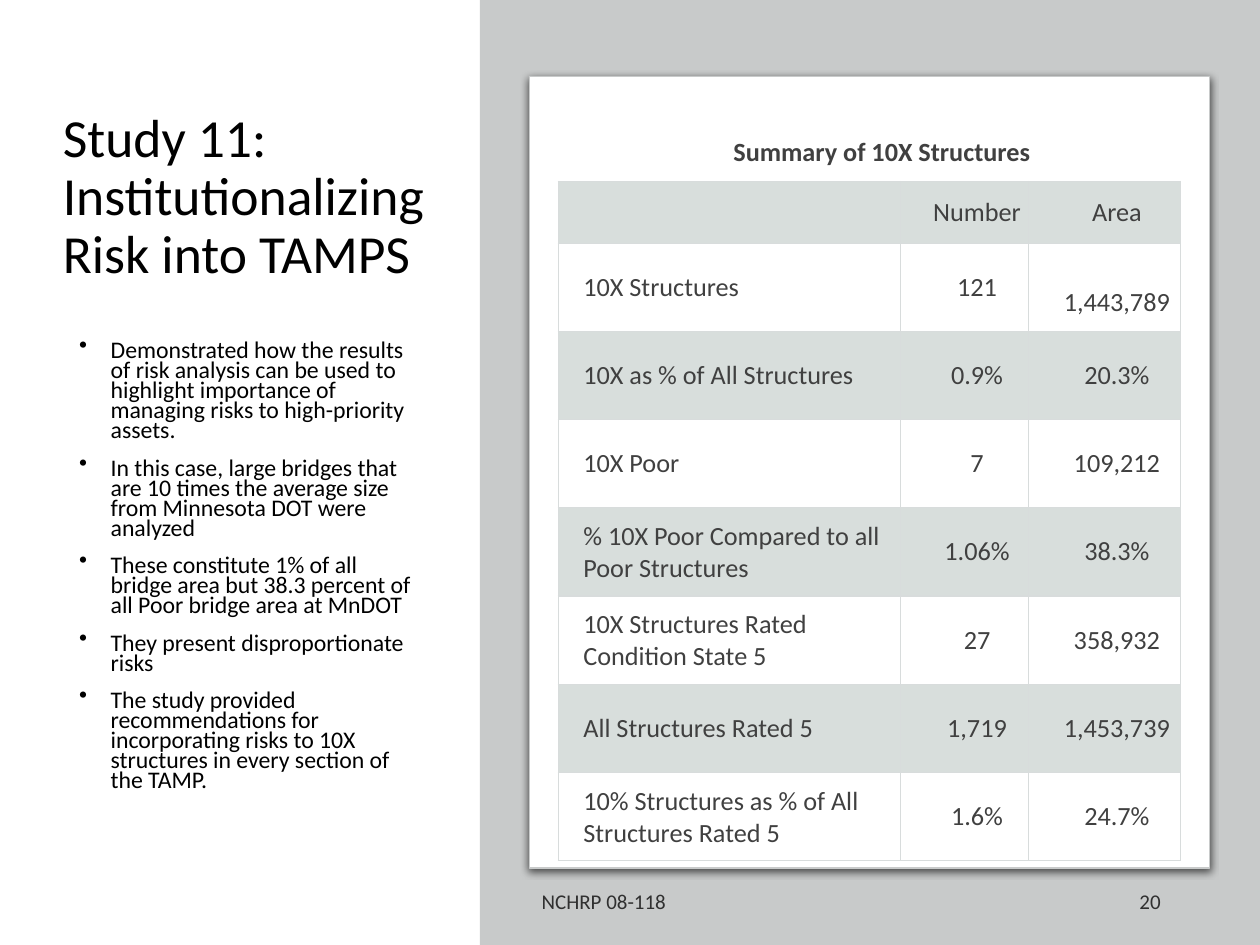
"""Build the slide on institutionalizing risk, with a summary table of 10X structures."""
from lxml import etree
from pptx import Presentation
from pptx import util as u
from pptx.dml.color import RGBColor
from pptx.enum import shapes, text
from pptx.oxml import ns, parse_xml

FONT = "Calibri"
GRAY, RULE, BAND = "C8CACA", "D8DCDC", "D8DEDC"
INK, FOOTER_INK, TABLE_INK = "000000", "303030", "404040"
LEFT, CENTER, RIGHT = text.PP_ALIGN.LEFT, text.PP_ALIGN.CENTER, text.PP_ALIGN.RIGHT
MIDDLE, BOTTOM = text.MSO_ANCHOR.MIDDLE, text.MSO_ANCHOR.BOTTOM

TITLE = "Study 11: Institutionalizing Risk into TAMPS"
BULLETS = [
    "Demonstrated how the results of risk analysis can be used to highlight "
    "importance of managing risks to high-priority assets.",
    "In this case, large bridges that are 10 times the average size from "
    "Minnesota DOT were analyzed",
    "These constitute 1% of all bridge area but 38.3 percent of all Poor "
    "bridge area at MnDOT",
    "They present disproportionate risks",
    "The study provided recommendations for incorporating risks to 10X "
    "structures in every section of the TAMP.",
]
FOOTERS = [
    ("NCHRP 08-118", (4.2, 6.95, 3.38, 0.4), LEFT),
    ("20", (7.06, 6.95, 2.25, 0.4), RIGHT),
]
ROWS = [
    ("Summary of 10X Structures", "", ""),
    ("", "Number", "Area"),
    ("10X Structures", "121", "1,443,789"),
    ("10X as % of All Structures", "0.9%", "20.3%"),
    ("10X Poor", "7", "109,212"),
    ("% 10X Poor Compared to all Poor Structures", "1.06%", "38.3%"),
    ("10X Structures Rated Condition State 5", "27", "358,932"),
    ("All Structures Rated 5", "1,719", "1,453,739"),
    ("10% Structures as % of All Structures Rated 5", "1.6%", "24.7%"),
]
COLUMN_WIDTHS = [2.72, 1.01, 1.21]
ROW_HEIGHTS = [0.49] * 2 + [0.7] * 7
LOWERED_CELL = (2, 2)


def color(code):
    return RGBColor.from_string(code)


def inches(place):
    return [u.Inches(value) for value in place]


def style(para, size, ink, align=LEFT, bold=False):
    para.alignment = align
    para.font.name = FONT
    para.font.size = u.Pt(size)
    para.font.bold = bold
    para.font.color.rgb = color(ink)


def add_text(page, place, lines, size, ink, align=LEFT, anchor=None):
    frame = page.shapes.add_textbox(*inches(place)).text_frame
    frame.word_wrap = True
    frame.vertical_anchor = anchor
    frame.text = "\n".join(lines)
    for para in frame.paragraphs:
        style(para, size, ink, align)
    return frame.paragraphs


def add_panel(page, kind, place, fill):
    panel = page.shapes.add_shape(kind, *inches(place))
    panel.shadow.inherit = False
    panel.fill.solid()
    panel.fill.fore_color.rgb = color(fill)
    panel.line.fill.background()
    return panel


def add_bullet(para):
    props = para._p.get_or_add_pPr()
    props.set("marL", str(u.Inches(0.25)))
    props.set("indent", str(u.Inches(-0.25)))
    mark = parse_xml(f'<a:buChar {ns.nsdecls("a")} char="•"/>')
    props.insert_element_before(mark, "a:tabLst", "a:defRPr", "a:extLst")


def add_shadow(panel):
    effects = panel._element.spPr.find(ns.qn("a:effectLst"))
    effects.append(parse_xml(
        f'<a:outerShdw {ns.nsdecls("a")} blurRad="{u.Pt(4.5)}" dist="{u.Pt(1.5)}" '
        'dir="5400000" algn="t" rotWithShape="0"><a:srgbClr val="000000">'
        '<a:alpha val="63000"/></a:srgbClr></a:outerShdw>'))


def add_border(cell, side, visible):
    paint = f'<a:solidFill><a:srgbClr val="{RULE}"/></a:solidFill>' if visible else "<a:noFill/>"
    cell._tc.get_or_add_tcPr().append(parse_xml(
        f'<a:ln{side} {ns.nsdecls("a")} w="{u.Pt(0.75)}">{paint}</a:ln{side}>'))


def fill_cell(cell, banded):
    if not banded:
        cell.fill.background()
        return
    cell.fill.solid()
    cell.fill.fore_color.rgb = color(BAND)
    tint = cell._tc.tcPr.find(".//" + ns.qn("a:srgbClr"))
    etree.SubElement(tint, ns.qn("a:alpha")).set("val", "20000")


def add_summary(page):
    place = (4.43, 0.95, sum(COLUMN_WIDTHS), sum(ROW_HEIGHTS))
    table = page.shapes.add_table(len(ROWS), len(COLUMN_WIDTHS), *inches(place)).table
    table.first_row = table.horz_banding = False
    for column, width in zip(table.columns, COLUMN_WIDTHS):
        column.width = u.Inches(width)
    for r, (row, height) in enumerate(zip(ROWS, ROW_HEIGHTS)):
        table.rows[r].height = u.Inches(height)
        heading = r == 0
        for c, words in enumerate(row):
            cell = table.cell(r, c)
            cell.text = words
            cell.vertical_anchor = BOTTOM if heading else MIDDLE
            cell.margin_left, cell.margin_right = u.Inches(0.2), 0
            cell.margin_top = u.Inches(0.34 if (r, c) == LOWERED_CELL else 0.1)
            cell.margin_bottom = u.Inches(0.1)
            align = CENTER if heading or c else LEFT
            style(cell.text_frame.paragraphs[0], 15, TABLE_INK, align, heading)
            for side in "LRTB":
                add_border(cell, side, not heading or side == "B")
            fill_cell(cell, r % 2 == 1)
    table.cell(0, 0).merge(table.cell(0, len(COLUMN_WIDTHS) - 1))


def main():
    deck = Presentation()
    deck.slide_width, deck.slide_height = u.Inches(10), u.Inches(7.5)
    page = deck.slides.add_slide(deck.slide_layouts[6])

    title = add_text(page, (0.4, 0.69, 3.18, 1.77), [TITLE], 30.6, INK, anchor=MIDDLE)
    title[0].line_spacing = 0.9
    for para in add_text(page, (0.53, 2.67, 2.88, 4.14), BULLETS, 13.6, INK):
        para.line_spacing = 0.7
        para.space_before = u.Pt(10)
        add_bullet(para)

    add_panel(page, shapes.MSO_SHAPE.RECTANGLE, (3.81, 0, 6.2, 7.5), GRAY)
    card = add_panel(page, shapes.MSO_SHAPE.ROUNDED_RECTANGLE, (4.2, 0.61, 5.4, 6.28), "FFFFFF")
    card.adjustments[0] = 0
    card.line.color.rgb = color(GRAY)
    card.line.width = u.Pt(0.75)
    add_shadow(card)

    for words, place, align in FOOTERS:
        footer = add_text(page, place, [words], 12, FOOTER_INK, align, MIDDLE)
        footer[0].space_after = u.Pt(6)
    add_summary(page)
    deck.save("out.pptx")


if __name__ == "__main__":
    main()
